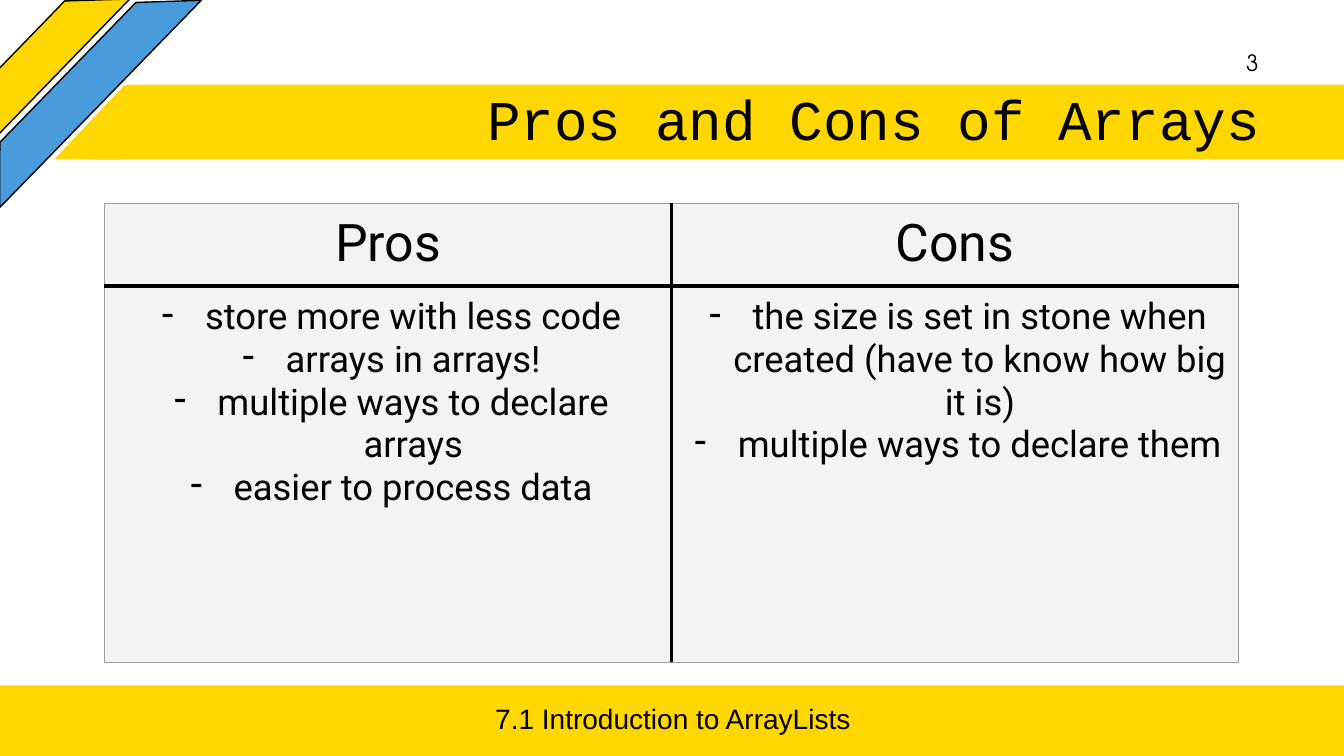
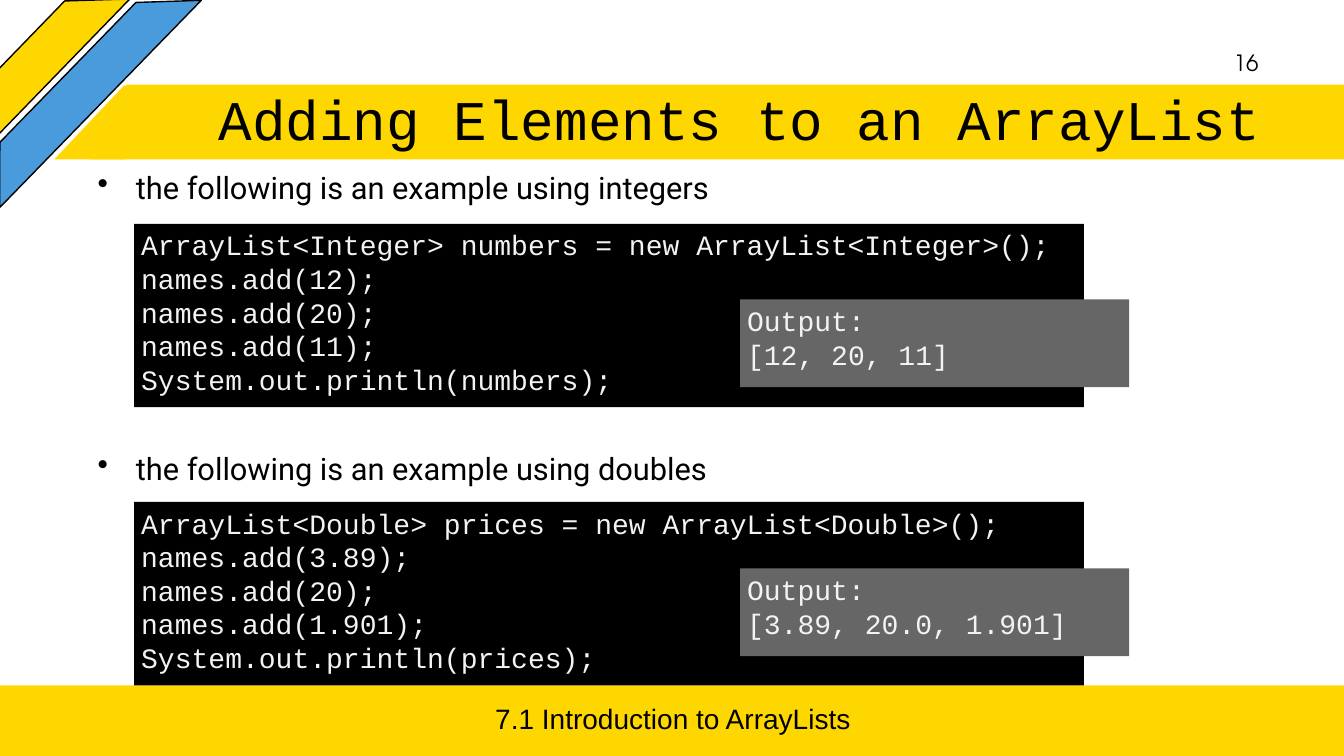
from dataclasses import dataclass
from typing import Optional

from lxml.etree import SubElement
from pptx import Presentation
from pptx.dml.color import RGBColor
from pptx.enum.shapes import MSO_SHAPE as Preset
from pptx.enum.text import MSO_ANCHOR as Anchor, PP_ALIGN as Align
from pptx.oxml.ns import qn
from pptx.util import Inches, Pt

BLACK = RGBColor(0x00, 0x00, 0x00)
WHITE = RGBColor(0xFF, 0xFF, 0xFF)
GOLD = RGBColor(0xFF, 0xD7, 0x00)
BLUE = RGBColor(0x4A, 0x9B, 0xDC)
PALE = RGBColor(0xF3, 0xF3, 0xF3)
GRAY = RGBColor(0x66, 0x66, 0x66)
BORDER_GRAY = RGBColor(0x9E, 0x9E, 0x9E)

SLIDE_WIDTH, SLIDE_HEIGHT = 13.33, 7.5
BAND_TOP, BAND_HEIGHT = 0.84, 0.74
FOOTER_TOP = 6.8
FOOTER = "7.1 Introduction to ArrayLists"


@dataclass(frozen=True)
class Box:
    left: float
    top: float
    width: float
    height: float

    def lengths(self):
        return [Inches(value) for value in (self.left, self.top, self.width, self.height)]


@dataclass(frozen=True)
class TextStyle:
    font: str
    size: float
    color: RGBColor = BLACK
    align: Align = Align.LEFT
    line_spacing: Optional[float] = None
    bullet: str = ""
    hanging: float = 0


@dataclass(frozen=True)
class Decoration:
    preset: Preset
    box: Box
    fill: RGBColor
    adjustment: Optional[float] = None
    rotation: float = 0
    flipped: bool = False
    outlined: bool = False


@dataclass(frozen=True)
class Column:
    heading: str
    points: tuple[str, ...]


@dataclass(frozen=True)
class CodeExample:
    caption: str
    caption_top: float
    code_top: float
    code: tuple[str, ...]
    output_top: float
    output: str


TITLE_STYLE = TextStyle("Courier New", 40, align=Align.RIGHT, line_spacing=0.9)
FOOTER_STYLE = TextStyle("Arial", 20, align=Align.CENTER)
NUMBER_STYLE = TextStyle("TeX Gyre Adventor", 16, align=Align.RIGHT)
HEADING_STYLE = TextStyle("Roboto", 37, align=Align.CENTER)
POINT_STYLE = TextStyle("Roboto", 26, align=Align.CENTER, bullet="-", hanging=0.43)
CAPTION_STYLE = TextStyle("Roboto", 22, line_spacing=1.15, bullet="•", hanging=0.38)
CODE_STYLE = TextStyle("Courier New", 20, PALE)

FOOTER_BAR = Decoration(
    Preset.RECTANGLE,
    Box(0, FOOTER_TOP, SLIDE_WIDTH, SLIDE_HEIGHT - FOOTER_TOP), GOLD)
STRIPES = (
    Decoration(Preset.TRAPEZOID, Box(-0.46, 0.28, 1.87, 0.45), GOLD,
               1.028, 314.1, outlined=True),
    Decoration(Preset.TRAPEZOID, Box(-0.6, 0.65, 2.87, 0.45), BLUE,
               1.038, 314.2, outlined=True),
)
TITLE_BAND = (
    Decoration(Preset.SNIP_1_RECTANGLE, Box(0.89, BAND_TOP, 12.44, BAND_HEIGHT),
               GOLD, 0.5, flipped=True),
    Decoration(Preset.RIGHT_TRIANGLE, Box(0.54, BAND_TOP, 0.7, BAND_HEIGHT),
               GOLD, flipped=True),
)

COLUMNS = (
    Column("Pros", (
        "store more with less code",
        "arrays in arrays!",
        "multiple ways to declare arrays",
        "easier to process data",
    )),
    Column("Cons", (
        "the size is set in stone when created (have to know how big it is)",
        "multiple ways to declare them",
    )),
)

EXAMPLES = (
    CodeExample(
        "the following is an example using integers", 1.57, 2.22,
        (
            "ArrayList<Integer> numbers = new ArrayList<Integer>();",
            "names.add(12);",
            "names.add(20);",
            "names.add(11);",
            "System.out.println(numbers);",
        ),
        2.97, "[12, 20, 11]"),
    CodeExample(
        "the following is an example using doubles", 4.36, 4.98,
        (
            "ArrayList<Double> prices = new ArrayList<Double>();",
            "names.add(3.89);",
            "names.add(20);",
            "names.add(1.901);",
            "System.out.println(prices);",
        ),
        5.64, "[3.89, 20.0, 1.901]"),
)


def add_bullet(paragraph, style: TextStyle) -> None:
    properties = paragraph._p.get_or_add_pPr()
    properties.set("marL", str(Inches(0.5)))
    properties.set("indent", str(-Inches(style.hanging)))
    color = SubElement(properties, qn("a:buClr"))
    SubElement(color, qn("a:srgbClr")).set("val", str(style.color))
    SubElement(properties, qn("a:buChar")).set("char", style.bullet)


def write_lines(frame, lines: tuple[str, ...], style: TextStyle) -> None:
    frame.word_wrap = True
    for index, line in enumerate(lines):
        paragraph = frame.add_paragraph() if index else frame.paragraphs[0]
        if style.bullet:
            add_bullet(paragraph, style)
        paragraph.alignment = style.align
        if style.line_spacing:
            paragraph.line_spacing = style.line_spacing
        run = paragraph.add_run()
        run.text = line
        run.font.name = style.font
        run.font.size = Pt(style.size)
        run.font.color.rgb = style.color


def add_text(slide, box: Box, text: str, style: TextStyle,
             anchor: Anchor = Anchor.MIDDLE) -> None:
    frame = slide.shapes.add_textbox(*box.lengths()).text_frame
    frame.vertical_anchor = anchor
    write_lines(frame, (text,), style)


def add_decoration(slide, decoration: Decoration):
    shape = slide.shapes.add_shape(decoration.preset, *decoration.box.lengths())
    shape.shadow.inherit = False
    shape.fill.solid()
    shape.fill.fore_color.rgb = decoration.fill
    if decoration.outlined:
        shape.line.color.rgb = BLACK
        shape.line.width = Pt(1)
    else:
        shape.line.fill.background()
    if decoration.adjustment is not None:
        shape.adjustments[0] = decoration.adjustment
    shape.rotation = decoration.rotation
    if decoration.flipped:
        shape._element.spPr.find(qn("a:xfrm")).set("flipH", "1")
    return shape


def add_panel(slide, box: Box, fill: RGBColor, lines: tuple[str, ...]) -> None:
    frame = add_decoration(slide, Decoration(Preset.RECTANGLE, box, fill)).text_frame
    frame.margin_left = frame.margin_right = Inches(0.07)
    frame.margin_top = frame.margin_bottom = Inches(0.04)
    frame.vertical_anchor = Anchor.TOP
    write_lines(frame, lines, CODE_STYLE)


def add_base_slide(presentation, title: str, number: int):
    slide = presentation.slides.add_slide(presentation.slide_layouts[6])
    slide.background.fill.solid()
    slide.background.fill.fore_color.rgb = WHITE
    for decoration in (FOOTER_BAR, *STRIPES, *TITLE_BAND):
        add_decoration(slide, decoration)
    add_text(slide, Box(0.22, 6.93, 12.91, 0.4), FOOTER, FOOTER_STYLE)
    add_text(slide, Box(1.39, BAND_TOP, 11.2, BAND_HEIGHT), title, TITLE_STYLE)
    add_text(slide, Box(9.58, 0.42, 3, 0.4), str(number), NUMBER_STYLE)
    return slide


def set_border(cell, side: str, inner: bool) -> None:
    color, width = (BLACK, 3) if inner else (BORDER_GRAY, 0.75)
    line = SubElement(cell._tc.get_or_add_tcPr(), qn(f"a:ln{side}"))
    line.set("w", str(Pt(width)))
    fill = SubElement(line, qn("a:solidFill"))
    SubElement(fill, qn("a:srgbClr")).set("val", str(color))


def fill_cell(cell, row: int, column: int, lines: tuple[str, ...],
              style: TextStyle) -> None:
    inner_sides = {"L": column == 1, "R": column == 0, "T": row == 1, "B": row == 0}
    for side, inner in inner_sides.items():
        set_border(cell, side, inner)
    cell.fill.solid()
    cell.fill.fore_color.rgb = PALE
    cell.margin_left = cell.margin_right = Inches(0.1)
    cell.margin_top = cell.margin_bottom = Inches(0.1)
    write_lines(cell.text_frame, lines, style)


def add_comparison(slide, columns: tuple[Column, ...]) -> None:
    row_heights = (0.8, 3.74)
    box = Box(1.04, 2.02, 11.24, sum(row_heights))
    table = slide.shapes.add_table(2, len(columns), *box.lengths()).table
    table.first_row = table.horz_banding = False
    for row, height in zip(table.rows, row_heights):
        row.height = Inches(height)
    for index, column in enumerate(columns):
        table.columns[index].width = Inches(box.width / len(columns))
        fill_cell(table.cell(0, index), 0, index, (column.heading,), HEADING_STYLE)
        fill_cell(table.cell(1, index), 1, index, column.points, POINT_STYLE)


def add_example(slide, example: CodeExample) -> None:
    add_text(slide, Box(0.75, example.caption_top, 11.83, 0.5),
             example.caption, CAPTION_STYLE, Anchor.TOP)
    add_panel(slide, Box(1.33, example.code_top, 9.42, 1.82), BLACK, example.code)
    add_panel(slide, Box(7.34, example.output_top, 3.86, 0.87), GRAY,
              ("Output:", example.output))


def main() -> None:
    presentation = Presentation()
    presentation.slide_width = Inches(SLIDE_WIDTH)
    presentation.slide_height = Inches(SLIDE_HEIGHT)

    add_comparison(add_base_slide(presentation, "Pros and Cons of Arrays", 3), COLUMNS)

    adding_slide = add_base_slide(presentation, "Adding Elements to an ArrayList", 16)
    for example in EXAMPLES:
        add_example(adding_slide, example)

    presentation.save("out.pptx")


if __name__ == "__main__":
    main()
